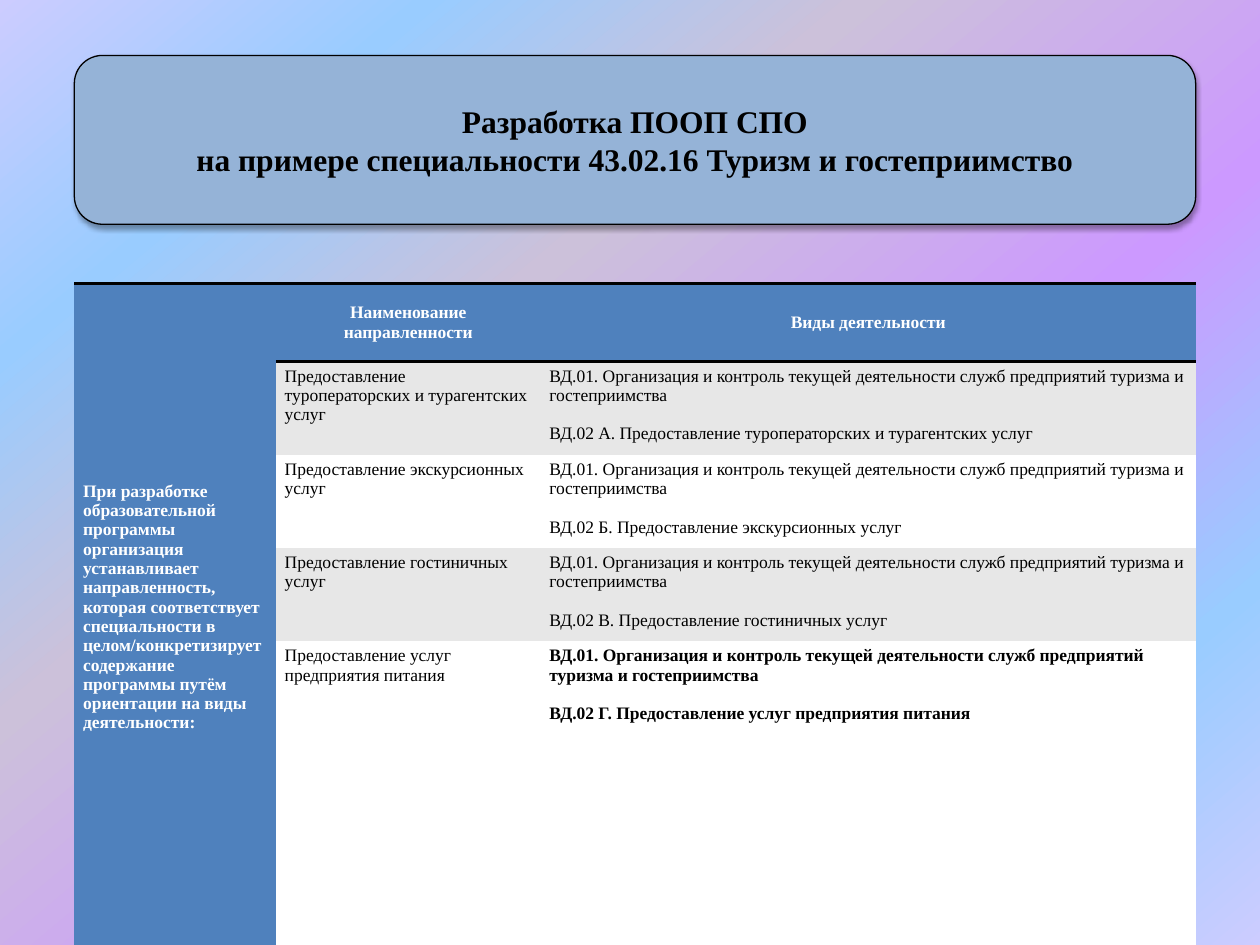
from lxml import etree
from pptx import Presentation
from pptx.dml.color import RGBColor
from pptx.enum.shapes import MSO_SHAPE
from pptx.enum.text import MSO_ANCHOR, PP_ALIGN
from pptx.oxml import parse_xml
from pptx.oxml.ns import nsdecls, qn
from pptx.util import Inches, Pt

ROUNDED = MSO_SHAPE.ROUNDED_RECTANGLE
MIDDLE, TOP = MSO_ANCHOR.MIDDLE, MSO_ANCHOR.TOP
CENTER, LEFT = PP_ALIGN.CENTER, PP_ALIGN.LEFT

FONT = "Times New Roman"
BLACK = RGBColor(0x00, 0x00, 0x00)
WHITE = RGBColor(0xFF, 0xFF, 0xFF)
BLUE = RGBColor(0x4F, 0x81, 0xBD)
LIGHT_BLUE = RGBColor(0x95, 0xB3, 0xD7)
GREY = RGBColor(0xE7, 0xE7, 0xE7)
LAVENDER = RGBColor(0xCC, 0xCC, 0xFF)
SKY = RGBColor(0x99, 0xCC, 0xFF)
MAUVE = RGBColor(0xCC, 0xC1, 0xDA)
VIOLET = RGBColor(0xCC, 0x99, 0xFF)

GRADIENT = [(0, LAVENDER), (18, SKY), (36, MAUVE), (61, VIOLET), (82, SKY), (100, LAVENDER)]
NO_TABLE_STYLE = "{2D5ABB26-0587-4C30-8999-92F81FD0307C}"

TITLE = ["Разработка ПООП СПО", "на примере специальности 43.02.16 Туризм и гостеприимство"]
INTRO = (
    "При разработке образовательной программы организация устанавливает "
    "направленность, которая соответствует специальности в целом/конкретизирует "
    "содержание программы путём ориентации на виды деятельности:"
)
HEADERS = ["Наименование направленности", "Виды деятельности"]
COMMON_ACTIVITY = (
    "ВД.01. Организация и контроль текущей деятельности служб предприятий "
    "туризма и гостеприимства"
)
DIRECTIONS = [
    ("Предоставление туроператорских и турагентских услуг", "ВД.02 А."),
    ("Предоставление экскурсионных услуг", "ВД.02 Б."),
    ("Предоставление гостиничных услуг", "ВД.02 В."),
    ("Предоставление услуг предприятия питания", "ВД.02 Г."),
]
COLUMN_WIDTHS = [1.6, 2.1, 5.2]
ROW_HEIGHTS = [0.62, 0.74, 0.74, 0.74, 2.41]


def write_text(tf, lines, size, color, bold, align):
    tf.text = "\n".join(lines)
    for p in tf.paragraphs:
        p.alignment = align
        for r in p.runs:
            r.font.name = FONT
            r.font.size = Pt(size)
            r.font.bold = bold
            r.font.color.rgb = color


def add_background(slide):
    stops = "".join(
        f'<a:gs pos="{pos * 1000}"><a:srgbClr val="{color}"/></a:gs>' for pos, color in GRADIENT
    )
    bg = parse_xml(
        f'<p:bg {nsdecls("p", "a")}><p:bgPr><a:gradFill rotWithShape="1">'
        f'<a:gsLst>{stops}</a:gsLst><a:lin ang="{50 * 60000}" scaled="0"/>'
        "</a:gradFill><a:effectLst/></p:bgPr></p:bg>"
    )
    slide._element.cSld.insert(0, bg)


def add_title(slide, left, top, width, height):
    sp = slide.shapes.add_shape(ROUNDED, left, top, width, height)
    sp.fill.solid()
    sp.fill.fore_color.rgb = LIGHT_BLUE
    sp.line.color.rgb = BLACK
    sp.line.width = Pt(0.75)
    sp.shadow.inherit = False
    effects = sp._element.spPr.find(qn("a:effectLst"))
    shadow = etree.SubElement(
        effects, qn("a:outerShdw"), blurRad=str(Pt(3.1)), dist=str(Pt(1.8)),
        dir=str(90 * 60000), rotWithShape="0",
    )
    color = etree.SubElement(shadow, qn("a:srgbClr"), val=str(BLACK))
    etree.SubElement(color, qn("a:alpha"), val="35000")
    tf = sp.text_frame
    tf.word_wrap = True
    tf.vertical_anchor = MIDDLE
    write_text(tf, TITLE, 18, BLACK, True, CENTER)


def add_border(cell, side):
    border = parse_xml(
        f'<a:{side} {nsdecls("a")} w="{Pt(2)}"><a:solidFill>'
        f'<a:srgbClr val="{BLACK}"/></a:solidFill></a:{side}>'
    )
    cell._tc.get_or_add_tcPr().insert(0, border)


def fill_cell(cell, lines, fill, color=BLACK, bold=False, align=LEFT, anchor=TOP):
    cell.margin_left = cell.margin_right = Inches(0.07)
    cell.margin_top = cell.margin_bottom = Inches(0.04)
    cell.vertical_anchor = anchor
    cell.fill.solid()
    cell.fill.fore_color.rgb = fill
    write_text(cell.text_frame, lines, 10, color, bold, align)


def add_directions_table(slide, left, top, width, height):
    frame = slide.shapes.add_table(len(ROW_HEIGHTS), len(COLUMN_WIDTHS), left, top, width, height)
    table = frame.table
    table.first_row = table.horz_banding = False
    table._tbl.tblPr.find(qn("a:tableStyleId")).text = NO_TABLE_STYLE
    for column, size in zip(table.columns, COLUMN_WIDTHS):
        column.width = Inches(size)
    for row, size in zip(table.rows, ROW_HEIGHTS):
        row.height = Inches(size)

    intro = table.cell(0, 0)
    intro.merge(table.cell(len(ROW_HEIGHTS) - 1, 0))
    fill_cell(intro, [INTRO], BLUE, WHITE, True, LEFT, MIDDLE)
    intro.margin_bottom = Inches(0.15)
    add_border(intro, "lnT")

    for col, header in enumerate(HEADERS, 1):
        cell = table.cell(0, col)
        fill_cell(cell, [header], BLUE, WHITE, True, CENTER, MIDDLE)
        add_border(cell, "lnB")
        add_border(cell, "lnT")

    for row, (direction, code) in enumerate(DIRECTIONS, 1):
        fill = GREY if row % 2 else WHITE
        fill_cell(table.cell(row, 1), [direction], fill)
        activities = table.cell(row, 2)
        is_last = row == len(DIRECTIONS)
        fill_cell(activities, [COMMON_ACTIVITY, f"{code} {direction}"], fill, bold=is_last)
        activities.text_frame.paragraphs[1].space_before = Pt(11)


def main():
    prs = Presentation()
    prs.slide_width, prs.slide_height = Inches(10), Inches(7.5)
    slide = prs.slides.add_slide(prs.slide_layouts[6])
    left, width = Inches(0.59), Inches(8.9)
    add_background(slide)
    add_title(slide, left, Inches(0.44), width, Inches(1.34))
    add_directions_table(slide, left, Inches(2.25), width, Inches(sum(ROW_HEIGHTS)))
    prs.save("out.pptx")


if __name__ == "__main__":
    main()
